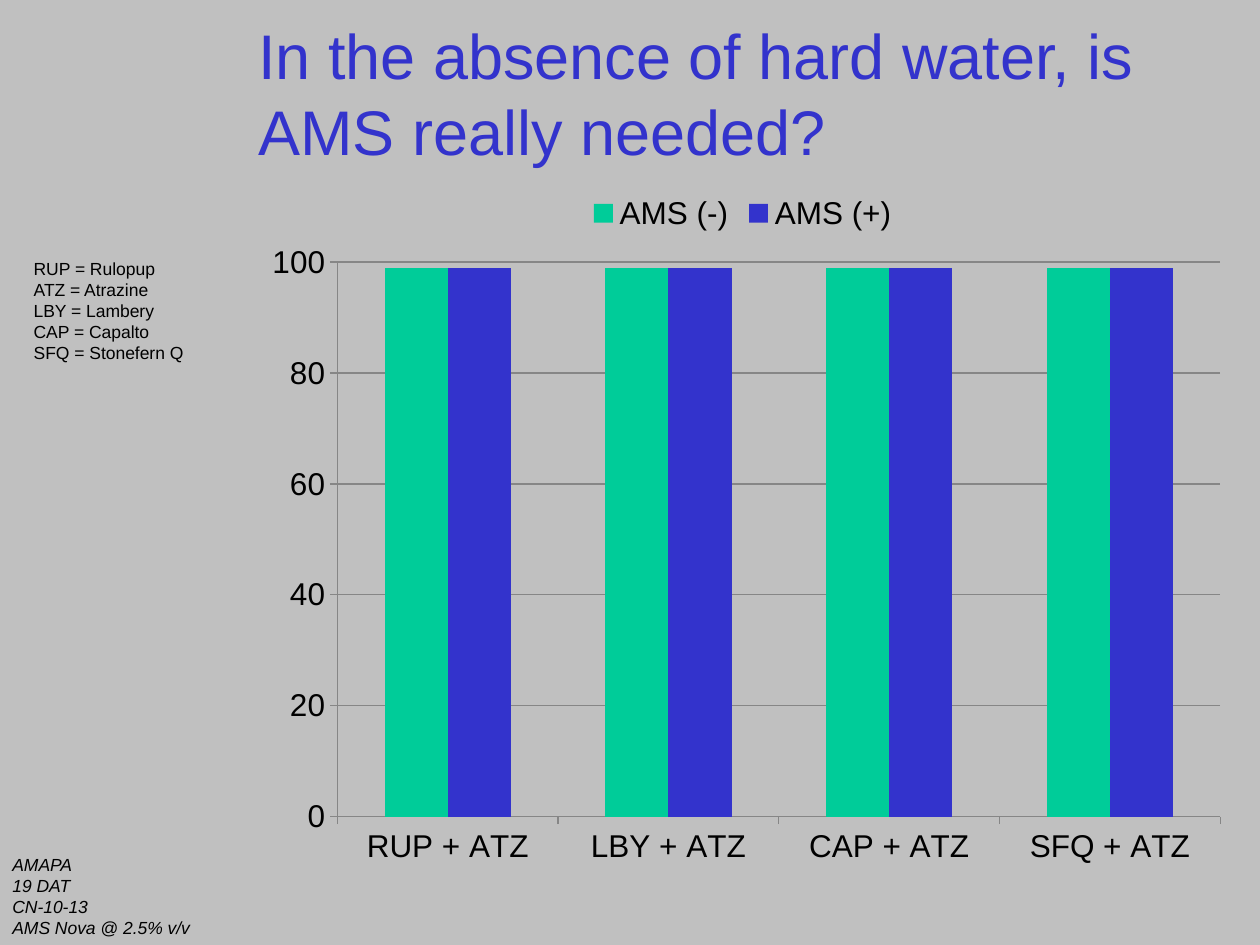
from lxml import etree
from pptx import Presentation
from pptx.chart.data import CategoryChartData
from pptx.dml.color import RGBColor
from pptx.enum.chart import XL_CHART_TYPE, XL_LEGEND_POSITION, XL_TICK_MARK
from pptx.enum.text import MSO_ANCHOR
from pptx.oxml.ns import qn
from pptx.util import Cm, Pt

GREY = RGBColor(0xC0, 0xC0, 0xC0)
LINE_GREY = RGBColor(0x86, 0x86, 0x86)
BLUE = RGBColor(0x33, 0x33, 0xCC)
GREEN = RGBColor(0x00, 0xCC, 0x99)
BLACK = RGBColor(0x00, 0x00, 0x00)
FONT = "Arial"


def add_lines(slide, box, lines, size, color, italic=False):
    """Add a text box with one paragraph per line and return its frame."""
    frame = slide.shapes.add_textbox(*[Cm(length) for length in box]).text_frame
    frame.word_wrap = True
    for index, line in enumerate(lines):
        paragraph = frame.paragraphs[0] if index == 0 else frame.add_paragraph()
        run = paragraph.add_run()
        run.text = line
        run.font.name = FONT
        run.font.size = Pt(size)
        run.font.italic = italic
        run.font.color.rgb = color
    return frame


prs = Presentation()
prs.slide_width, prs.slide_height = Cm(25.4), Cm(19.05)
slide = prs.slides.add_slide(prs.slide_layouts[6])
slide.background.fill.solid()
slide.background.fill.fore_color.rgb = GREY

# Title
title = add_lines(slide, (4.96, 0.27, 20.24, 3.18),
                  ["In the absence of hard water, is AMS really needed?"], 36, BLUE)
title.vertical_anchor = MSO_ANCHOR.MIDDLE

# Weed control with and without AMS
control = CategoryChartData()
control.categories = ["RUP + ATZ", "LBY + ATZ", "CAP + ATZ", "SFQ + ATZ"]
control.add_series("AMS (-)", [99] * 4)
control.add_series("AMS (+)", [99] * 4)
chart = slide.shapes.add_chart(XL_CHART_TYPE.COLUMN_CLUSTERED, Cm(4.96), Cm(3.63),
                               Cm(20.02), Cm(14.15), control).chart
chart.has_title = False
chart.font.name = FONT
chart.font.size = Pt(18)
chart.font.color.rgb = BLACK
chart.has_legend = True
chart.legend.position = XL_LEGEND_POSITION.TOP
chart.legend.include_in_layout = False

columns = chart.plots[0]
columns.gap_width = 150
columns.overlap = 0
columns.vary_by_categories = False
for series, color in zip(columns.series, (GREEN, BLUE)):
    series.format.fill.solid()
    series.format.fill.fore_color.rgb = color

# Axes and gridlines
percent_axis = chart.value_axis
percent_axis.minimum_scale, percent_axis.maximum_scale = 0, 100
percent_axis.major_unit = 20
percent_axis.has_major_gridlines = True
for axis in (chart.category_axis, percent_axis):
    axis.major_tick_mark = XL_TICK_MARK.OUTSIDE
    axis.minor_tick_mark = XL_TICK_MARK.NONE
for lined in (chart.category_axis, percent_axis, percent_axis.major_gridlines):
    lined.format.line.color.rgb = LINE_GREY
    lined.format.line.width = Pt(0.75)

# Fixed inner plot area, as fractions of the chart
plot_area = columns._element.getparent()
for old_layout in plot_area.findall(qn("c:layout")):
    plot_area.remove(old_layout)
layout = etree.Element(qn("c:layout"))
plot_area.insert(0, layout)
manual = etree.SubElement(layout, qn("c:manualLayout"))
for tag, value in (("layoutTarget", "inner"), ("xMode", "edge"), ("yMode", "edge"),
                   ("x", 0.092), ("y", 0.117), ("w", 0.889), ("h", 0.79)):
    etree.SubElement(manual, qn(f"c:{tag}")).set("val", str(value))

# Trial details and herbicide key
add_lines(slide, (0, 17.09, 4.5, 1.96),
          ["AMAPA", "19 DAT", "CN-10-13", "AMS Nova @ 2.5% v/v"],
          10, BLACK, italic=True)
add_lines(slide, (0.43, 5.08, 4.5, 2.39),
          ["RUP = Rulopup", "ATZ = Atrazine", "LBY = Lambery",
           "CAP = Capalto", "SFQ = Stonefern Q"], 10, BLACK)

prs.save("out.pptx")
